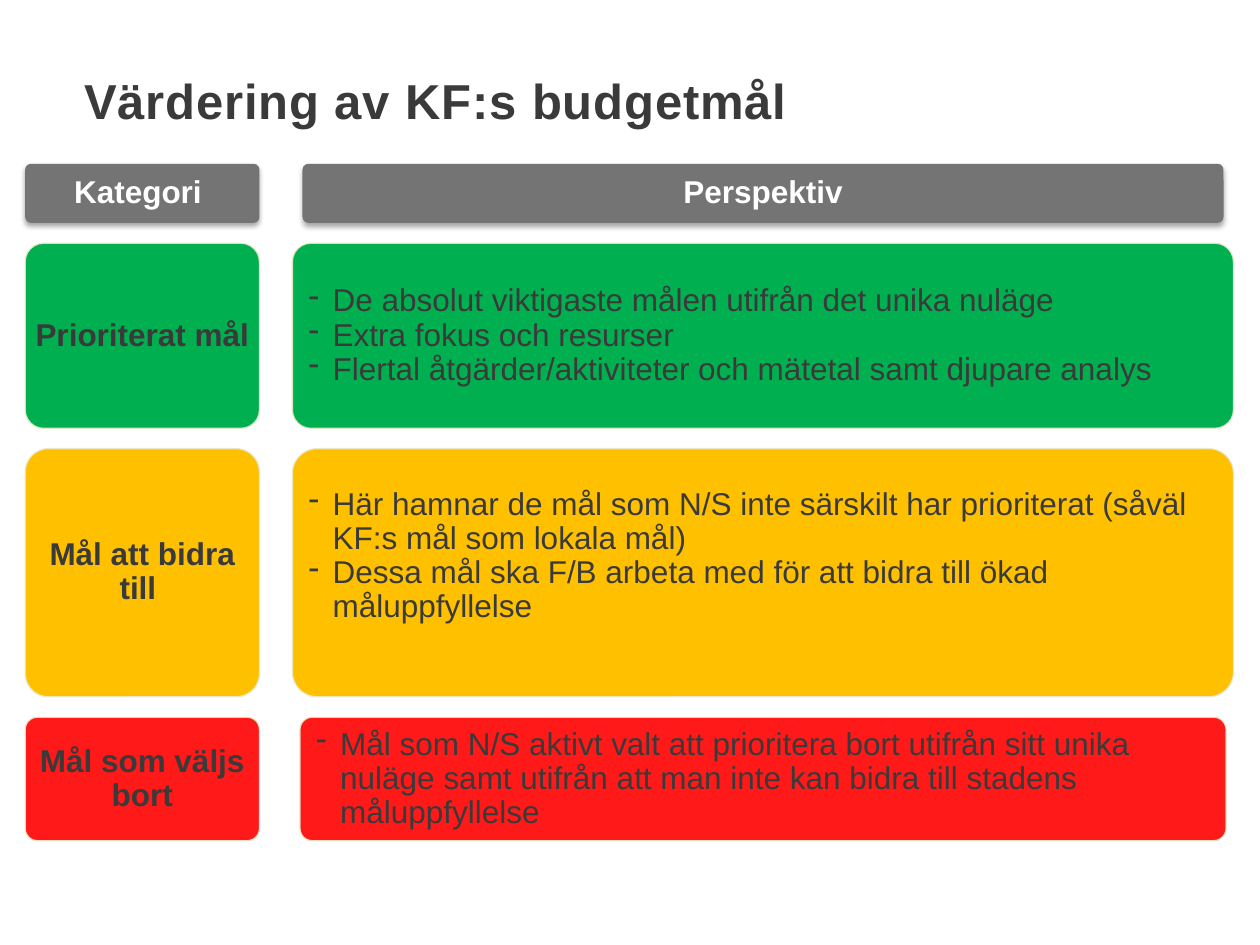
"""Build a slide that explains how budget goals are valued by category."""
from lxml.etree import SubElement
from pptx import Presentation
from pptx.dml.color import RGBColor
from pptx.enum.shapes import MSO_SHAPE
from pptx.enum.text import MSO_ANCHOR, MSO_AUTO_SIZE, PP_ALIGN
from pptx.oxml.ns import qn
from pptx.util import Pt

COLORS = {"text": "3A3A3A", "white": "FFFFFF", "header": "747474", "green": "00B050",
          "yellow": "FFC000", "red": "FF0000", "border": "E9E9CC", "shadow": "000000"}
CATEGORY_LEFT, CATEGORY_WIDTH = 14.4, 133.9
PERSPECTIVE_CENTER = 436
ROW_GAP = 11.6
CORNER_INSET = 0.029
ROWS = [
    {"fill": "header", "height": 33.8, "width": 526.3, "bottom": 0,
     "category": "Kategori ", "lines": ["Perspektiv"]},
    {"fill": "green", "height": 105.8, "width": 537.8, "bottom": 0,
     "category": "Prioriterat mål",
     "lines": ["De absolut viktigaste målen utifrån det unika nuläge",
               "Extra fokus och resurser",
               "Flertal åtgärder/aktiviteter och mätetal samt djupare analys"]},
    {"fill": "yellow", "height": 141.8, "width": 537.8, "bottom": 18.6,
     "category": "Mål att bidra till ",
     "lines": ["Här hamnar de mål som N/S inte särskilt har prioriterat "
               "(såväl KF:s mål som lokala mål)",
               "Dessa mål ska F/B arbeta med för att bidra till ökad måluppfyllelse"]},
    {"fill": "red", "height": 70.6, "width": 529.2, "bottom": 0,
     "category": "Mål som väljs bort",
     "lines": ["Mål som N/S aktivt valt att prioritera bort utifrån sitt unika nuläge "
               "samt utifrån att man inte kan bidra till stadens måluppfyllelse"]},
]


def format_font(font, color, **values):
    for name, value in {"name": "Arial", **values}.items():
        setattr(font, name, value)
    font.color.rgb = RGBColor.from_string(COLORS[color])


def add_card(page, row, left, top, width, lines, bulleted, bottom):
    is_header = row["fill"] == "header"
    card = page.shapes.add_shape(MSO_SHAPE.ROUNDED_RECTANGLE, Pt(left), Pt(top),
                                 Pt(width), Pt(row["height"]))
    card.adjustments[0] = 0.1
    card.shadow.inherit = False
    card.fill.solid()
    card.fill.fore_color.rgb = RGBColor.from_string(COLORS[row["fill"]])
    properties = card.fill._xPr
    if is_header:
        card.line.fill.background()
        shadow = SubElement(properties.find(qn("a:effectLst")), qn("a:outerShdw"),
                            blurRad=str(Pt(3.1)), dist=str(Pt(1.8)), dir="5400000", rotWithShape="0")
        shade = SubElement(shadow, qn("a:srgbClr"), val=COLORS["shadow"])
        SubElement(shade, qn("a:alpha"), val="35000")
    else:
        card.line.width = Pt(0.75)
        card.line.color.rgb = RGBColor.from_string(COLORS["border"])
        see_through = [properties.find(f"{qn('a:ln')}/{qn('a:solidFill')}/{qn('a:srgbClr')}")]
        if row["fill"] == "red":
            see_through.append(properties.find(f"{qn('a:solidFill')}/{qn('a:srgbClr')}"))
        for color in see_through:
            SubElement(color, qn("a:alpha"), val="90000")
    frame = card.text_frame
    for name, value in {"word_wrap": True, "vertical_anchor": MSO_ANCHOR.MIDDLE,
                        "margin_left": 0, "margin_right": 0, "margin_top": 0,
                        "margin_bottom": Pt(bottom)}.items():
        setattr(frame, name, value)
    frame.text = "\n".join(lines)
    for para in frame.paragraphs:
        para.alignment = PP_ALIGN.LEFT if bulleted else PP_ALIGN.CENTER
        para.line_spacing = 0.9
        if bulleted:
            settings = para._p.get_or_add_pPr()
            settings.set("marL", str(Pt(23 - CORNER_INSET * row["height"])))
            settings.set("indent", str(Pt(-13.7)))
            SubElement(settings, qn("a:buFontTx"))
            SubElement(settings, qn("a:buChar"), char="-")
        format_font(para.runs[0].font, "white" if is_header else "text",
                    size=Pt(18), bold=not bulleted)


deck = Presentation()
deck.slide_width, deck.slide_height = Pt(720), Pt(540)
page = deck.slides.add_slide(deck.slide_layouts[5])

title = page.shapes.title
for name, value in {"left": 41, "top": 33.1, "width": 530.6, "height": 54.7}.items():
    setattr(title, name, Pt(value))
title.text_frame.text = "Värdering av KF:s budgetmål"
title.text_frame.auto_size = MSO_AUTO_SIZE.NONE
title.text_frame.vertical_anchor = MSO_ANCHOR.MIDDLE
heading = title.text_frame.paragraphs[0]
heading.alignment = PP_ALIGN.LEFT
heading.line_spacing = Pt(27)
span = heading.runs[0]
format_font(span.font, "text", size=Pt(28), bold=True)
span._r.get_or_add_rPr().set("spc", "50")

top = 93.6
for row in ROWS:
    add_card(page, row, CATEGORY_LEFT, top, CATEGORY_WIDTH, [row["category"]], False, 0)
    add_card(page, row, PERSPECTIVE_CENTER - row["width"] / 2, top, row["width"],
             row["lines"], row["fill"] != "header", row["bottom"])
    top += row["height"] + ROW_GAP

deck.save("out.pptx")
